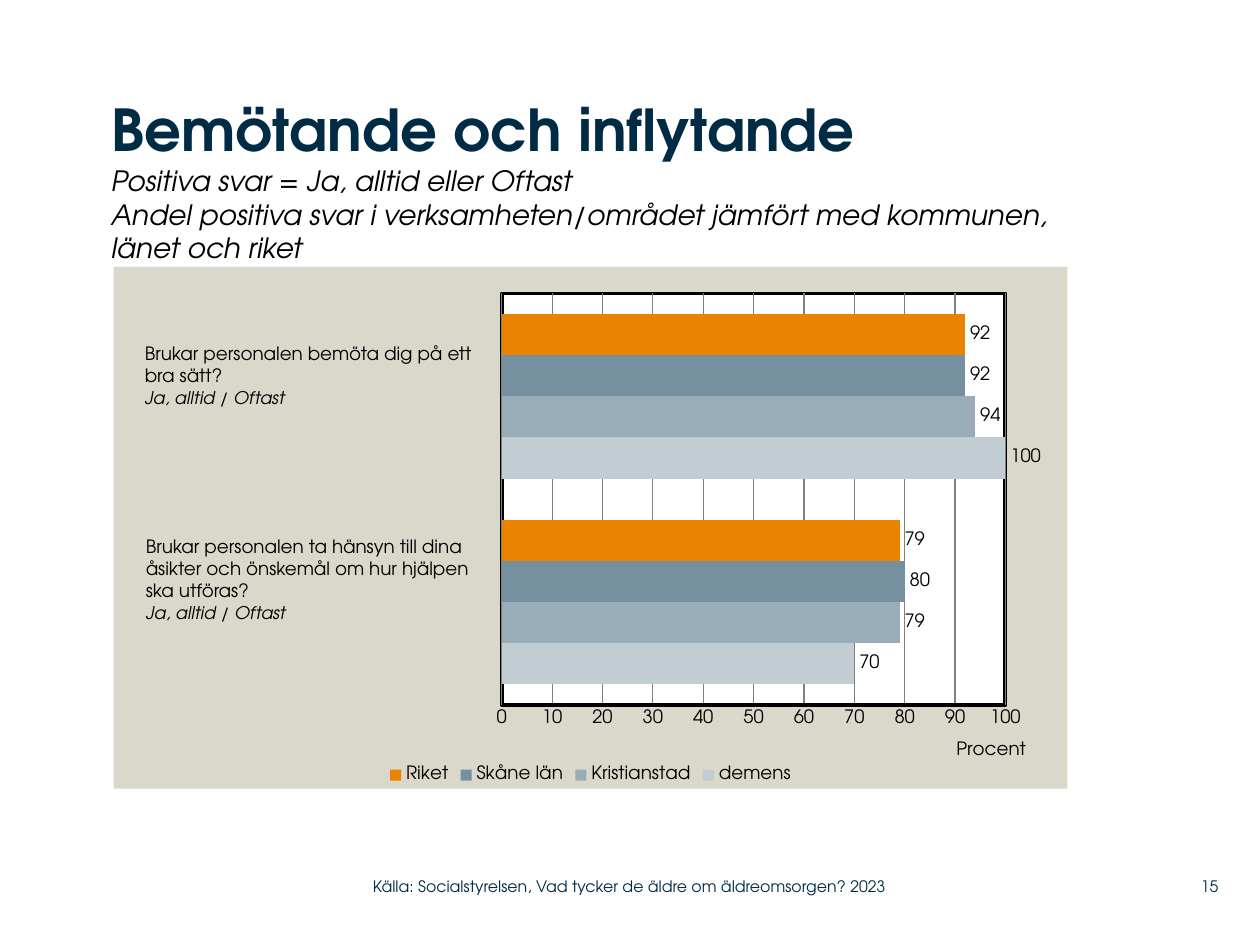
"""Build a slide comparing survey answers in a clustered bar chart."""
import copy

import lxml.etree
import pptx
import pptx.chart.data
import pptx.dml.color
import pptx.enum.chart
import pptx.enum.text
import pptx.oxml
import pptx.oxml.ns
import pptx.util

Cm, Pt, qn = pptx.util.Cm, pptx.util.Pt, pptx.oxml.ns.qn
FONT = "TeX Gyre Adventor"
COLORS = {"navy": "002B45", "black": "000000", "white": "FFFFFF", "panel": "DAD7CB", "grid": "808080"}
SERIES = [
    ("demens", (70, 100), "C2CDD3"),
    ("Kristianstad", (79, 94), "99ADB9"),
    ("Skåne län", (80, 92), "75909F"),
    ("Riket", (79, 92), "E98300"),
]
QUESTIONS = [
    (0.38, 1.4, 7.54, 2.06, ["Brukar personalen bemöta dig på ett", "bra sätt?"]),
    (0.4, 5.29, 7.65, 2.49, ["Brukar personalen ta hänsyn till dina",
                             "åsikter och önskemål om hur hjälpen", "ska utföras?"]),
]


def rgb(name):
    """Return the colour for a palette name or a hex string."""
    return pptx.dml.color.RGBColor.from_string(COLORS.get(name, name))


def set_font(font, size, color="black", bold=False, italic=False):
    """Apply the slide's typeface with the given size and style."""
    font.name, font.size, font.bold, font.italic = FONT, Pt(size), bold, italic
    font.color.rgb = rgb(color)


def set_fill(fmt, color):
    """Give a format object a solid fill."""
    fmt.fill.solid()
    fmt.fill.fore_color.rgb = rgb(color)


def clear_margins(tf):
    """Remove all insets of a text frame."""
    tf.margin_left = tf.margin_top = tf.margin_right = tf.margin_bottom = 0


def add_chart_xml(parent, tag, text=None):
    """Add a chart part described in XML and return the new element."""
    el = pptx.oxml.parse_xml(f'<c:{tag} {pptx.oxml.ns.nsdecls("c", "a")}>{text or ""}</c:{tag}>')
    parent.append(el)
    return el


def place(parent, before, **values):
    """Set a manual layout on a chart part, ahead of the given sibling."""
    for old in parent.findall(qn("c:layout")):
        parent.remove(old)
    inner = "".join(f'<c:{key} val="{val}"/>' for key, val in values.items())
    layout = add_chart_xml(parent, "layout", f"<c:manualLayout>{inner}</c:manualLayout>")
    parent.find(qn(before)).addprevious(layout)


def add_title(s, x, y, w, h):
    """Fill the title placeholder with the heading and its subtitle lines."""
    sp = s.shapes.title
    sp.left, sp.top, sp.width, sp.height = Cm(x), Cm(y), Cm(w), Cm(h)
    tf = sp.text_frame
    tf.word_wrap = True
    tf.auto_size = pptx.enum.text.MSO_AUTO_SIZE.NONE
    tf.vertical_anchor = pptx.enum.text.MSO_ANCHOR.TOP
    clear_margins(tf)
    p = tf.paragraphs[0]
    p.text = ("Bemötande och inflytande\vPositiva svar = Ja, alltid eller Oftast\v"
              "Andel positiva svar i verksamheten/området jämfört med kommunen, länet och riket")
    p.alignment = pptx.enum.text.PP_ALIGN.LEFT
    heading, *subtitle = p.runs
    set_font(heading.font, 33, "navy", bold=True)
    for r in subtitle:
        set_font(r.font, 16, italic=True)
    for br in p._p.findall(qn("a:br")):
        br.append(copy.deepcopy(br.getprevious().find(qn("a:rPr"))))


def add_chart(s, x, y, w, h):
    """Add the bar chart panel."""
    data = pptx.chart.data.CategoryChartData()
    data.categories = ["1", "2"]
    for name, values, _ in SERIES:
        data.add_series(name, values)
    kind = pptx.enum.chart.XL_CHART_TYPE.BAR_CLUSTERED
    chart = s.shapes.add_chart(kind, Cm(x), Cm(y), Cm(w), Cm(h), data).chart
    set_font(chart.font, 10.5)
    chart.has_title = False
    chart.has_legend = True
    chart.legend.position = pptx.enum.chart.XL_LEGEND_POSITION.BOTTOM
    chart.legend.include_in_layout = False
    set_font(chart.legend.font, 10.5)
    style_axes(chart)
    style_bars(chart.plots[0])
    style_areas(chart)


def style_axes(chart):
    """Hide the category axis and format the percent axis."""
    chart.category_axis.visible = False
    axis = chart.value_axis
    axis.minimum_scale, axis.maximum_scale, axis.major_unit = 0, 100, 10
    axis.major_tick_mark = pptx.enum.chart.XL_TICK_MARK.NONE
    axis.has_major_gridlines = True
    line = axis.major_gridlines.format.line
    line.color.rgb, line.width = rgb("grid"), Pt(0.75)
    axis.format.line.color.rgb, axis.format.line.width = rgb("black"), Pt(2)
    set_font(axis.tick_labels.font, 10.5)
    tf = axis.axis_title.text_frame
    tf.text = "Procent"
    set_font(tf.paragraphs[0].runs[0].font, 10.5)
    place(axis.axis_title._element, "c:overlay", xMode="edge", yMode="edge", x=0.88, y=0.9)


def style_bars(plot):
    """Colour the bars and show their values."""
    plot.gap_width, plot.overlap, plot.vary_by_categories = 100, 0, False
    for series, (_, _, color) in zip(plot.series, SERIES):
        set_fill(series.format, color)
        labels = series.data_labels
        labels.show_value = True
        labels.position = pptx.enum.chart.XL_LABEL_POSITION.OUTSIDE_END
        set_font(labels.font, 10.5)


def style_areas(chart):
    """Fill the panel and the framed plot area, and place the plot."""
    space = chart._chartSpace
    area = space.chart.plotArea
    place(area, "c:barChart", layoutTarget="inner", xMode="edge", yMode="edge",
          x=0.407, y=0.051, w=0.528, h=0.789)
    fill = '<a:solidFill><a:srgbClr val="{}"/></a:solidFill>'
    frame = f'<a:ln w="{Pt(2.25)}">{fill.format(COLORS["black"])}</a:ln>'
    add_chart_xml(area, "spPr", fill.format(COLORS["white"]) + frame)
    panel = add_chart_xml(space, "spPr", fill.format(COLORS["panel"]) + "<a:ln><a:noFill/></a:ln>")
    space.chart.addnext(panel)


def add_questions(s, x, y):
    """Place the question texts relative to the chart's corner."""
    for dx, dy, w, h, lines in QUESTIONS:
        tf = s.shapes.add_textbox(Cm(x + dx), Cm(y + dy), Cm(w), Cm(h)).text_frame
        tf.word_wrap = True
        tf.text = "\n".join(lines + ["Ja, alltid / Oftast"])
        *question, answer = tf.paragraphs
        for p in question:
            set_font(p.runs[0].font, 10.5)
        set_font(answer.runs[0].font, 10, italic=True)


def add_footer(s, text, x, y, w, h, align):
    """Add one footer text."""
    tf = s.shapes.add_textbox(Cm(x), Cm(y), Cm(w), Cm(h)).text_frame
    tf.word_wrap = True
    clear_margins(tf)
    tf.vertical_anchor = pptx.enum.text.MSO_ANCHOR.MIDDLE
    tf.text = text
    p = tf.paragraphs[0]
    p.alignment = align
    set_font(p.runs[0].font, 9, "navy")


def main():
    """Build and save the presentation."""
    prs = pptx.Presentation()
    prs.slide_width, prs.slide_height = Cm(25.4), Cm(19.05)
    s = prs.slides.add_slide(prs.slide_layouts.get_by_name("Title Only"))
    align = pptx.enum.text.PP_ALIGN
    add_chart(s, 2.29, 5.38, 19.23, 10.52)
    add_title(s, 2.24, 1.9, 20.42, 3.05)
    add_questions(s, 2.29, 5.38)
    add_footer(s, "15", 23.37, 17.5, 1.19, 0.74, align.RIGHT)
    add_footer(s, "Källa: Socialstyrelsen, Vad tycker de äldre om äldreomsorgen? 2023",
               7.52, 17.5, 11.25, 0.74, align.LEFT)
    prs.save("out.pptx")


if __name__ == "__main__":
    main()
